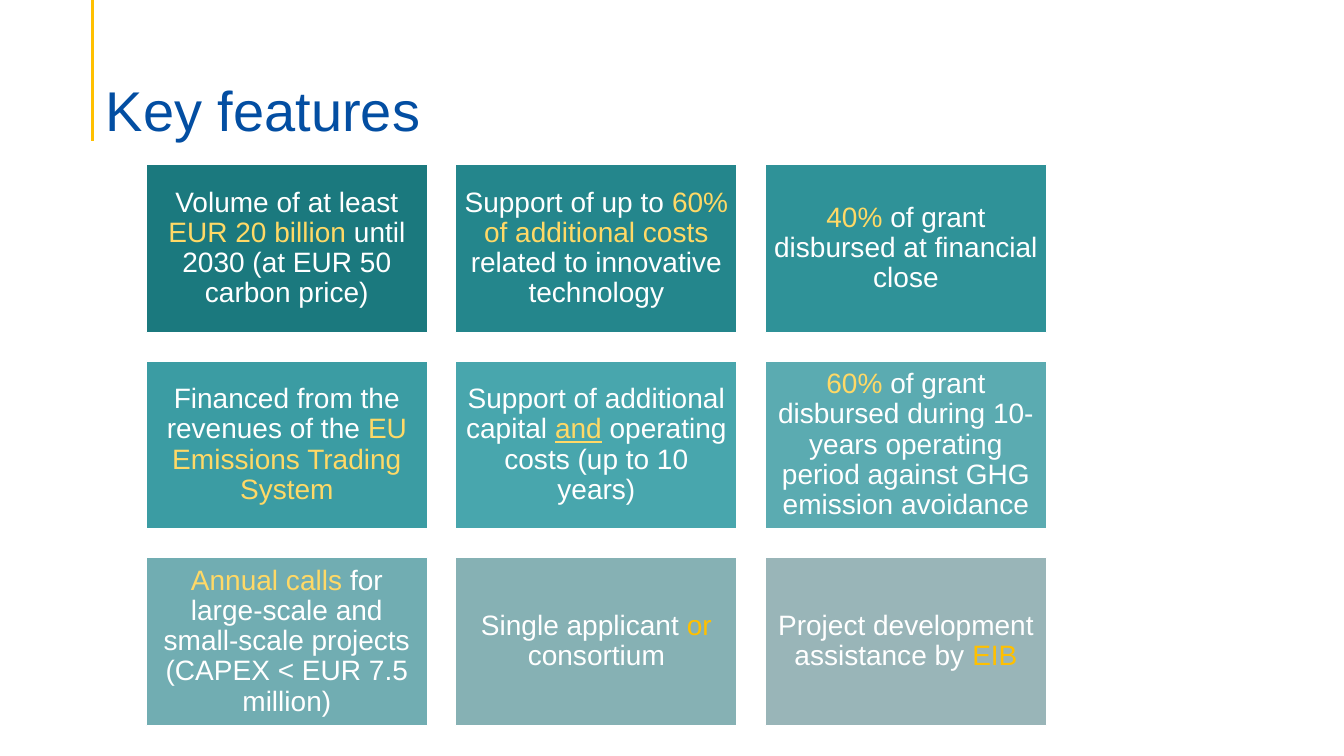
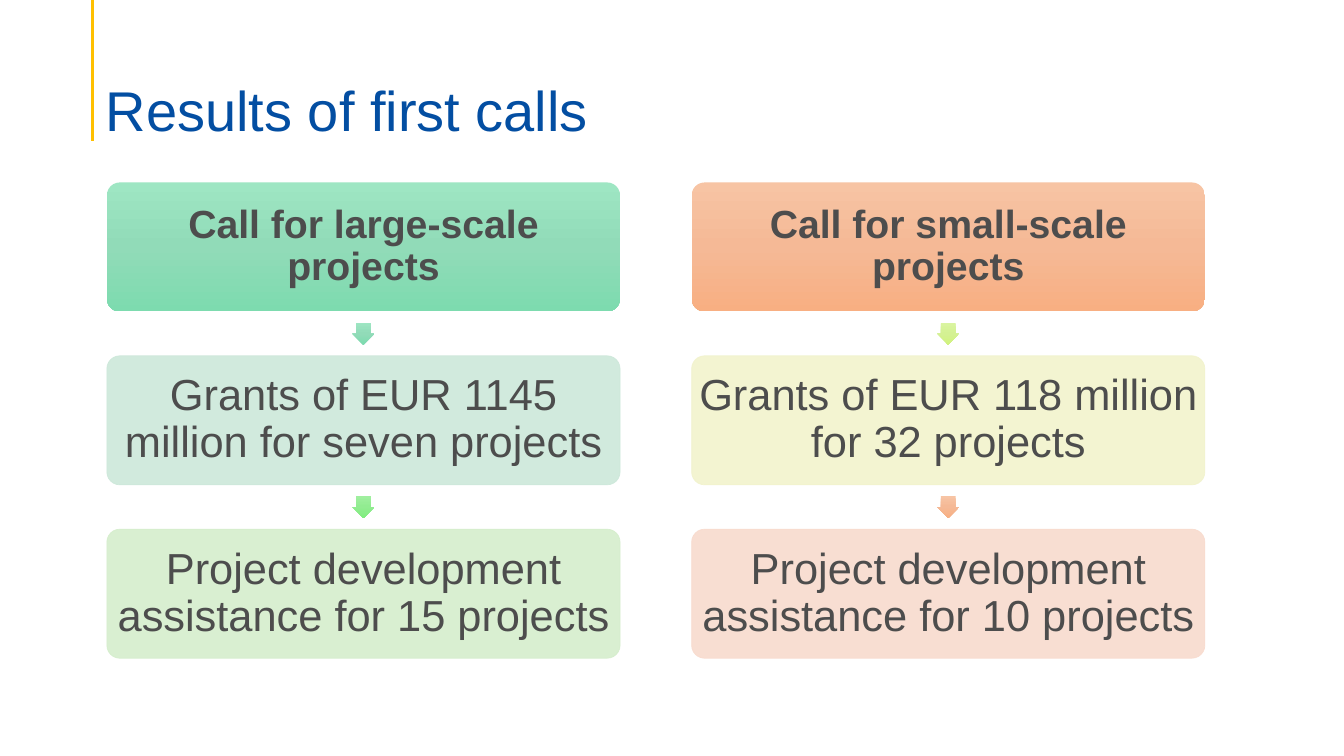
from copy import deepcopy
from dataclasses import dataclass
from typing import Any, NamedTuple

import lxml.etree
import pptx
import pptx.dml.color
import pptx.enum.dml
import pptx.enum.shapes
import pptx.enum.text
import pptx.oxml.ns
import pptx.util

Inches = pptx.util.Inches
Pt = pptx.util.Pt
RGBColor = pptx.dml.color.RGBColor
Shapes = pptx.enum.shapes.MSO_SHAPE
Anchor = pptx.enum.text.MSO_ANCHOR
Align = pptx.enum.text.PP_ALIGN
qn = pptx.oxml.ns.qn

FONT = "Arial"
WHITE = RGBColor(0xFF, 0xFF, 0xFF)
TITLE_BLUE = RGBColor(0x03, 0x4E, 0xA2)
GOLD = RGBColor(0xFF, 0xC0, 0x00)
PALE_GOLD = RGBColor(0xFF, 0xD9, 0x66)
DARK_GREY = RGBColor(0x4D, 0x4D, 0x4D)
TEALS = [
    RGBColor.from_string(code)
    for code in (
        "1B797E", "24868C", "2F9298",
        "3B9CA3", "48A6AD", "5BABB1",
        "71ADB2", "86B1B4", "99B5B8",
    )
]
MINT_STEP = RGBColor(0xCD, 0xE8, 0xDA)
GREEN_STEP = RGBColor(0xD5, 0xEE, 0xCC)
LIME_STEP = RGBColor(0xF2, 0xF3, 0xCD)
PEACH_STEP = RGBColor(0xF8, 0xDB, 0xCE)

Gradient = tuple[RGBColor, RGBColor, RGBColor]
MINT: Gradient = (
    RGBColor(0x9E, 0xE6, 0xC3), RGBColor(0x91, 0xDB, 0xB8), RGBColor(0x7D, 0xDB, 0xAF))
GREEN: Gradient = (
    RGBColor(0xA0, 0xEF, 0x9F), RGBColor(0x92, 0xEC, 0x91), RGBColor(0x7E, 0xEE, 0x7D))
LIME: Gradient = (
    RGBColor(0xDA, 0xF4, 0xA1), RGBColor(0xD4, 0xF1, 0x93), RGBColor(0xD1, 0xF3, 0x7E))
PEACH: Gradient = (
    RGBColor(0xF7, 0xC4, 0xA4), RGBColor(0xF5, 0xB9, 0x96), RGBColor(0xF8, 0xAF, 0x82))


class Span(NamedTuple):
    text: str
    color: RGBColor = WHITE
    underline: bool = False


class Box(NamedTuple):
    left: float
    top: float
    width: float
    height: float


@dataclass(frozen=True)
class Step:
    text: str
    fill: RGBColor
    arrow: Gradient


@dataclass(frozen=True)
class Call:
    heading: str
    fill: Gradient
    steps: tuple[Step, ...]


FEATURES: list[list[Span]] = [
    [Span("Volume of at least "), Span("EUR 20 billion ", PALE_GOLD),
     Span("until 2030 (at EUR 50 carbon price)")],
    [Span("Support of up to "), Span("60% of additional costs ", PALE_GOLD),
     Span("related to innovative technology")],
    [Span("40%", PALE_GOLD), Span(" of grant disbursed at financial close")],
    [Span("Financed from the revenues of the "),
     Span("EU Emissions Trading System", PALE_GOLD)],
    [Span("Support of additional capital "), Span("and", PALE_GOLD, True),
     Span(" operating costs (up to 10 years)")],
    [Span("60%", PALE_GOLD),
     Span(" of grant disbursed during 10-years operating period "
          "against GHG emission avoidance")],
    [Span("Annual calls ", PALE_GOLD),
     Span("for large-scale and small-scale projects (CAPEX < EUR 7.5 million)")],
    [Span("Single applicant "), Span("or", GOLD), Span(" consortium")],
    [Span("Project development assistance by "), Span("EIB", GOLD)],
]

CALLS = [
    Call("Call for large-scale projects", MINT, (
        Step("Grants of EUR 1145 million for seven projects", MINT_STEP, MINT),
        Step("Project development assistance for 15 projects", GREEN_STEP, GREEN),
    )),
    Call("Call for small-scale projects", PEACH, (
        Step("Grants of EUR 118 million for 32 projects", LIME_STEP, LIME),
        Step("Project development assistance for 10 projects", PEACH_STEP, PEACH),
    )),
]

TILE = Box(1.45, 1.63, 2.79, 1.67)
TILE_GAP = 0.28
TILE_COLUMNS = 3
TILE_INSET = 0.08
CARD = Box(1.06, 1.81, 5.09, 1.28)
CARD_PITCH_X = 5.8
CARD_PITCH_Y = 1.72
CARD_INSET = 0.03
ARROW_SIZE = 0.22


def apply(target: Any, values: dict[str, Any]) -> None:
    for attribute, value in values.items():
        setattr(target, attribute, value)


def write(shape: Any, spans: list[Span], size: float, align: Align, bold: bool = False) -> None:
    paragraph = shape.text_frame.paragraphs[0]
    apply(paragraph, {"alignment": align, "line_spacing": 0.9})
    for span in spans:
        run = paragraph.add_run()
        run.text = span.text
        apply(run.font, {"name": FONT, "size": Pt(size), "bold": bold,
                         "underline": span.underline})
        run.font.color.rgb = span.color


def add_block(slide: Any, preset: Shapes, box: Box, inset: float) -> Any:
    block = slide.shapes.add_shape(preset, *map(Inches, box))
    block.shadow.inherit = False
    margin = Inches(inset)
    apply(block.text_frame, {
        "word_wrap": True, "vertical_anchor": Anchor.MIDDLE,
        "margin_left": margin, "margin_right": margin,
        "margin_top": margin, "margin_bottom": margin,
    })
    return block


def fill_gradient(shape: Any, colors: Gradient) -> None:
    shape.line.fill.background()
    shape.fill.gradient()
    shape.fill.gradient_angle = 270
    stop_list = shape.element.find(".//" + qn("a:gsLst"))
    stop_list.insert(1, deepcopy(stop_list[0]))
    for stop, color, position in zip(shape.fill.gradient_stops, colors, (0, 0.5, 1)):
        stop.color.rgb = color
        stop.position = position


def fill_translucent(shape: Any, color: RGBColor) -> None:
    for fill in (shape.fill, shape.line.fill):
        fill.solid()
        fill.fore_color.rgb = color
    shape.line.width = Pt(0.5)
    for tint in shape.element.spPr.iter(qn("a:srgbClr")):
        lxml.etree.SubElement(tint, qn("a:alpha")).set("val", "90000")


def add_titled_slide(deck: Any, title: str) -> Any:
    slide = deck.slides.add_slide(deck.slide_layouts[5])
    accent = slide.shapes.add_connector(
        pptx.enum.shapes.MSO_CONNECTOR.STRAIGHT,
        Inches(0.92), Inches(0), Inches(0.92), Inches(1.4))
    accent.line.color.rgb = GOLD
    accent.line.width = Pt(2.25)
    lxml.etree.SubElement(accent.element.spPr, qn("a:effectLst"))
    heading = slide.shapes.title
    apply(heading, {"left": Inches(0.95), "top": Inches(0.4),
                    "width": Inches(12), "height": Inches(1.02)})
    apply(heading.text_frame, {
        "word_wrap": True, "auto_size": pptx.enum.text.MSO_AUTO_SIZE.NONE,
        "vertical_anchor": Anchor.BOTTOM,
        "margin_left": Inches(0.1), "margin_right": Inches(0.1),
        "margin_top": Inches(0.05), "margin_bottom": Inches(0),
    })
    write(heading, [Span(title, TITLE_BLUE)], 40, Align.LEFT)
    return slide


def add_feature_tiles(slide: Any) -> None:
    for index, (spans, color) in enumerate(zip(FEATURES, TEALS)):
        row, column = divmod(index, TILE_COLUMNS)
        box = TILE._replace(
            left=TILE.left + column * (TILE.width + TILE_GAP),
            top=TILE.top + row * (TILE.height + TILE_GAP))
        tile = add_block(slide, Shapes.RECTANGLE, box, TILE_INSET)
        tile.fill.solid()
        tile.fill.fore_color.rgb = color
        tile.line.color.rgb = WHITE
        tile.line.width = Pt(1)
        write(tile, spans, 20, Align.CENTER)


def add_card(slide: Any, box: Box) -> Any:
    card = add_block(slide, Shapes.ROUNDED_RECTANGLE, box, CARD_INSET)
    card.adjustments[0] = 0.1
    return card


def add_arrow(slide: Any, next_card: Box, colors: Gradient) -> None:
    gap = CARD_PITCH_Y - CARD.height
    box = Box(
        next_card.left + (next_card.width - ARROW_SIZE) / 2,
        next_card.top - (gap + ARROW_SIZE) / 2,
        ARROW_SIZE, ARROW_SIZE)
    arrow = add_block(slide, Shapes.DOWN_ARROW, box, 0)
    arrow.adjustments[0] = 0.67
    arrow.adjustments[1] = 0.5
    fill_gradient(arrow, colors)


def add_call(slide: Any, call: Call, column: int) -> None:
    box = CARD._replace(left=CARD.left + column * CARD_PITCH_X)
    header = add_card(slide, box)
    fill_gradient(header, call.fill)
    write(header, [Span(call.heading, DARK_GREY)], 28, Align.CENTER, bold=True)
    for row, step in enumerate(call.steps, start=1):
        step_box = box._replace(top=box.top + row * CARD_PITCH_Y)
        add_arrow(slide, step_box, step.arrow)
        card = add_card(slide, step_box)
        fill_translucent(card, step.fill)
        write(card, [Span(step.text, DARK_GREY)], 31, Align.CENTER)


def main() -> None:
    deck = pptx.Presentation()
    apply(deck, {"slide_width": Inches(13.33), "slide_height": Inches(7.5)})
    add_feature_tiles(add_titled_slide(deck, "Key features"))
    results = add_titled_slide(deck, "Results of first calls")
    for column, call in enumerate(CALLS):
        add_call(results, call, column)
    deck.save("out.pptx")


if __name__ == "__main__":
    main()
